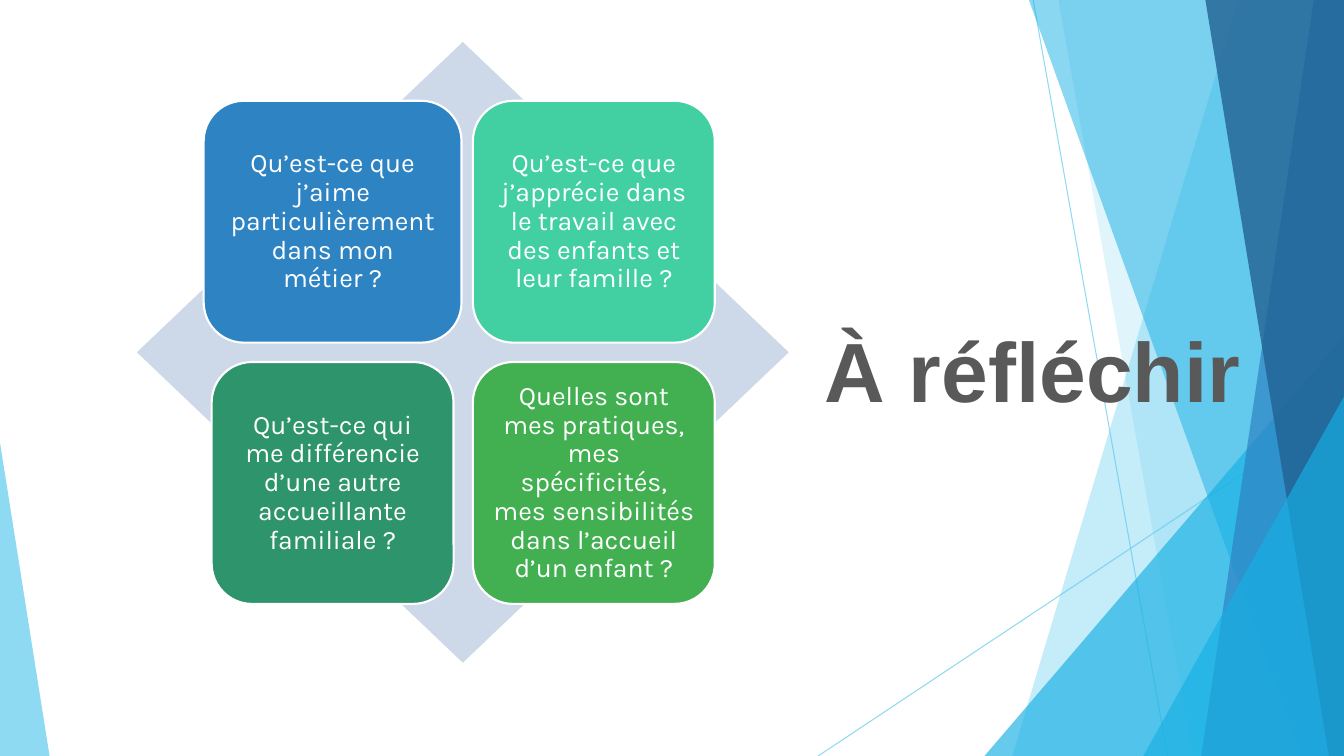
import dataclasses
import typing

import pptx
import pptx.dml.color
import pptx.enum.shapes
import pptx.enum.text
import pptx.oxml.ns
import pptx.oxml.xmlchemy
import pptx.util
import lxml.etree

Kind = pptx.enum.shapes.MSO_SHAPE
Anchor = pptx.enum.text.MSO_ANCHOR
Align = pptx.enum.text.PP_ALIGN

# The slide is a grid of 16 by 9 square cells
COLS, ROWS = 16, 9
CELL = pptx.util.Inches(7.5) / ROWS


@dataclasses.dataclass(frozen=True)
class Theme:
    sky: str = "5FCBEF"
    cyan: str = "17B0E4"
    blue: str = "2E83C3"
    navy: str = "226292"
    pale: str = "CDD9E9"
    mint: str = "42D0A2"
    teal: str = "2E946B"
    green: str = "42B051"
    white: str = "FFFFFF"
    grey: str = "595959"
    head: str = "Arial"
    body: str = "Karla"
    big: int = 60
    small: int = 19


THEME = Theme()


class Ray(typing.NamedTuple):
    """A thin line between two grid points."""
    x1: float
    y1: float
    x2: float
    y2: float


class Band(typing.NamedTuple):
    """A full-height area from a slanted edge to the right side."""
    top: float
    foot: float
    color: str
    alpha: int


class Wedge(typing.NamedTuple):
    """A right triangle standing on the slide's foot."""
    left: float
    top: float
    width: float
    apex: float
    color: str
    alpha: int


class Tile(typing.NamedTuple):
    """A rounded question box in a column and row of the matrix."""
    col: int
    row: int
    width: float
    color: str
    text: str


RAYS = [Ray(12.3, 0, 13.9, ROWS), Ray(COLS, 4.84, 9.74, ROWS)]

DECOR = [
    Band(14.74, 12.05, THEME.sky, 36),
    Band(12.6, 14.2, THEME.sky, 20),
    Wedge(11.72, 4, 4.28, 1, THEME.cyan, 66),
    Band(12.25, 15.49, THEME.cyan, 50),
    Band(15.64, 14.3, THEME.blue, 70),
    Band(14.35, 15.82, THEME.navy, 80),
    Wedge(13.61, 4.72, 2.39, 1, THEME.cyan, 66),
    Wedge(0, 5.27, 0.59, 0, THEME.sky, 70),
]

SIDE, STEP = 2.88, 3.11
MID_X, MID_Y = 3.96, 2.64
TILES = [
    Tile(0, 0, 3.07, THEME.blue,
         "Qu’est-ce que j’aime particulièrement dans mon métier ?"),
    Tile(1, 0, SIDE, THEME.mint,
         "Qu’est-ce que j’apprécie dans le travail avec des enfants et leur famille ?"),
    Tile(0, 1, SIDE, THEME.teal,
         "Qu’est-ce qui me différencie d’une autre accueillante familiale ?"),
    Tile(1, 1, SIDE, THEME.green,
         "Quelles sont mes pratiques, mes spécificités, mes sensibilités "
         "dans l’accueil d’un enfant ?"),
]


def grid(*cells: float) -> list[pptx.util.Emu]:
    return [pptx.util.Emu(round(n * CELL)) for n in cells]


def rgb(color: str) -> pptx.dml.color.RGBColor:
    return pptx.dml.color.RGBColor.from_string(color)


def apply(target: typing.Any, values: dict[str, typing.Any]) -> None:
    for name, value in values.items():
        setattr(target, name, value)


def fade(part: typing.Any, alpha: int) -> None:
    """Make the solid colour of a fill or line partly clear."""
    tone = next(part.iter(pptx.oxml.ns.qn("a:srgbClr")))
    lxml.etree.SubElement(tone, pptx.oxml.ns.qn("a:alpha"), val=str(alpha * 1000))


def paint(shape: typing.Any, color: str, alpha: int = 100) -> None:
    shape.shadow.inherit = False
    shape.fill.solid()
    shape.fill.fore_color.rgb = rgb(color)
    shape.line.fill.background()
    if alpha < 100:
        fade(shape.fill._xPr, alpha)


def write(shape: typing.Any, text: str, frame: dict, para: dict, font: dict,
          color: str) -> None:
    box = shape.text_frame
    box.text = text
    apply(box, {"word_wrap": True, "auto_size": pptx.enum.text.MSO_AUTO_SIZE.NONE,
                **frame})
    line = box.paragraphs[0]
    apply(line, para)
    apply(line.runs[0].font, font)
    line.runs[0].font.color.rgb = rgb(color)


def draw_ray(shapes: typing.Any, ray: Ray) -> None:
    line = shapes.add_connector(pptx.enum.shapes.MSO_CONNECTOR.STRAIGHT, *grid(*ray))
    line.line.width = pptx.util.Pt(0.75)
    line.line.color.rgb = rgb(THEME.sky)
    props = line._element.spPr
    fade(props, 70)
    lxml.etree.SubElement(props, pptx.oxml.ns.qn("a:effectLst"))


def draw_band(shapes: typing.Any, band: Band) -> None:
    path = shapes.build_freeform(*grid(band.top, 0))
    path.add_line_segments([grid(COLS, 0), grid(COLS, ROWS), grid(band.foot, ROWS)])
    paint(path.convert_to_shape(), band.color, band.alpha)


def draw_wedge(shapes: typing.Any, wedge: Wedge) -> None:
    place = grid(wedge.left, wedge.top, wedge.width, ROWS - wedge.top)
    shape = shapes.add_shape(Kind.ISOSCELES_TRIANGLE, *place)
    shape.adjustments[0] = wedge.apex
    paint(shape, wedge.color, wedge.alpha)


def draw_tile(shapes: typing.Any, tile: Tile) -> None:
    left = MID_X + tile.col * STEP - tile.width / 2
    top = MID_Y + tile.row * STEP - SIDE / 2
    shape = shapes.add_shape(Kind.ROUNDED_RECTANGLE, *grid(left, top, tile.width, SIDE))
    paint(shape, tile.color)
    shape.line.color.rgb = rgb(THEME.white)
    shape.line.width = pptx.util.Pt(1.5)
    sides = ("left", "top", "right", "bottom")
    inset = {f"margin_{side}": pptx.util.Inches(0.08) for side in sides}
    write(shape, tile.text, {"vertical_anchor": Anchor.MIDDLE, **inset},
          {"alignment": Align.CENTER, "line_spacing": 0.9},
          {"name": THEME.body, "size": pptx.util.Pt(THEME.small)}, THEME.white)


def main() -> None:
    deck = pptx.Presentation()
    wide, high = grid(COLS, ROWS)
    apply(deck, {"slide_width": wide, "slide_height": high})
    slide = deck.slides.add_slide(deck.slide_layouts[5])
    shapes = slide.shapes
    title = shapes.title

    # Slanted backdrop
    for ray in RAYS:
        draw_ray(shapes, ray)
    for item in DECOR:
        if isinstance(item, Band):
            draw_band(shapes, item)
        else:
            draw_wedge(shapes, item)

    # Title, brought in front of the backdrop
    shapes._spTree.append(title._element)
    apply(title, dict(zip(("left", "top", "width", "height"),
                          grid(9.7, 3.62, 5.28, 1.8))))
    write(title, "À réfléchir",
          {"vertical_anchor": Anchor.TOP, "margin_top": pptx.util.Inches(0.14)},
          {"alignment": Align.LEFT},
          {"name": THEME.head, "size": pptx.util.Pt(THEME.big), "bold": True},
          THEME.grey)

    # Question matrix on its diamond
    paint(shapes.add_shape(Kind.DIAMOND, *grid(1.63, 0.5, 7.76, 7.39)), THEME.pale)
    for tile in TILES:
        draw_tile(shapes, tile)

    deck.save("out.pptx")


if __name__ == "__main__":
    main()
